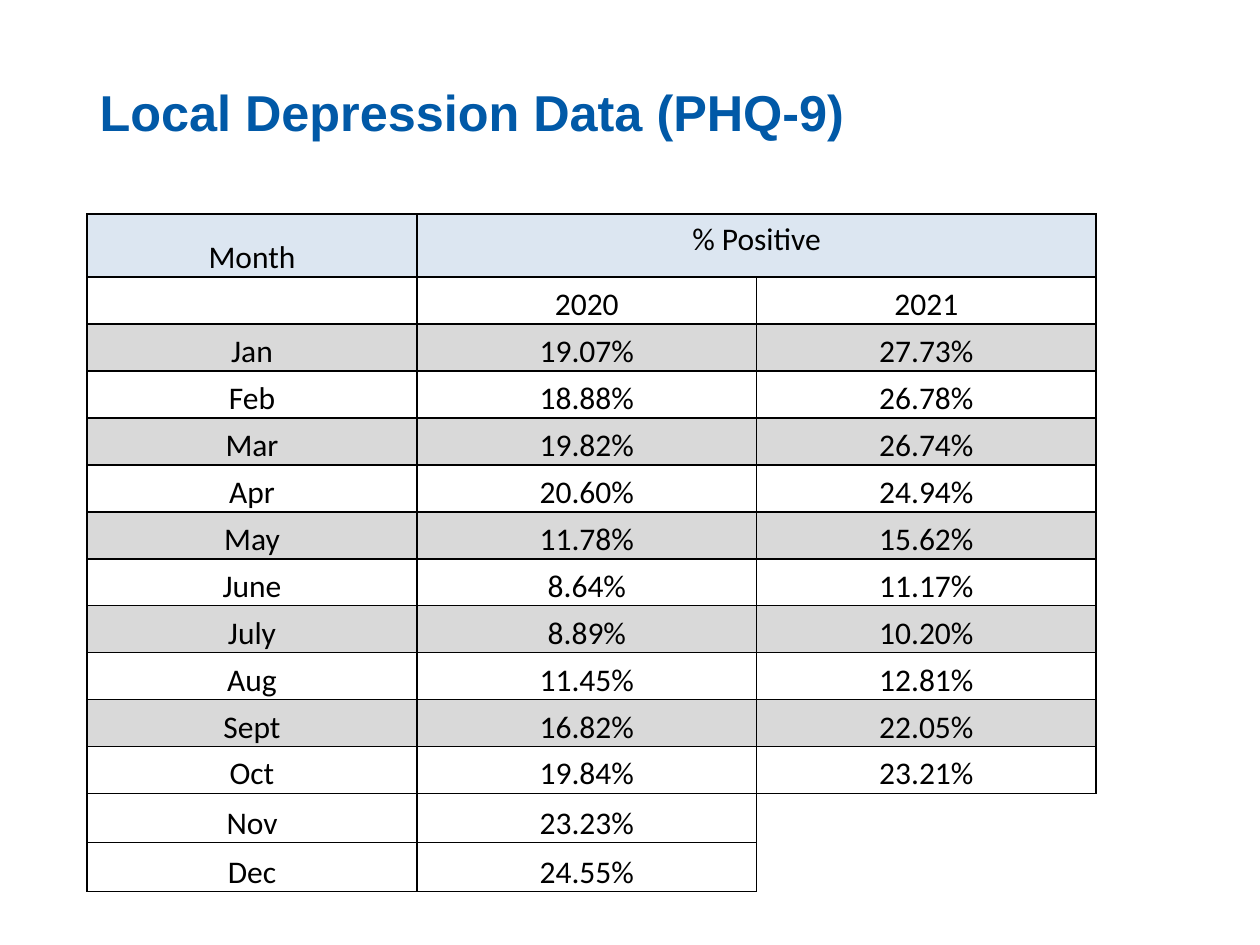
from lxml import etree
from pptx import Presentation
from pptx.dml.color import RGBColor
from pptx.enum.text import MSO_ANCHOR, MSO_AUTO_SIZE, PP_ALIGN
from pptx.oxml.ns import qn
from pptx.util import Inches, Pt

CENTER = PP_ALIGN.CENTER
TOP, MIDDLE, BOTTOM = MSO_ANCHOR.TOP, MSO_ANCHOR.MIDDLE, MSO_ANCHOR.BOTTOM
FIXED = MSO_AUTO_SIZE.NONE

INK, BLUE, HEAD, BAND, WHITE = "000000", "0159A7", "DCE6F1", "D9D9D9", "FFFFFF"

DATA = [
    ("Month", "% Positive", ""),
    ("", "2020", "2021"),
    ("Jan", "19.07%", "27.73%"),
    ("Feb", "18.88%", "26.78%"),
    ("Mar", "19.82%", "26.74%"),
    ("Apr", "20.60%", "24.94%"),
    ("May", "11.78%", "15.62%"),
    ("June", "8.64%", "11.17%"),
    ("July", "8.89%", "10.20%"),
    ("Aug", "11.45%", "12.81%"),
    ("Sept", "16.82%", "22.05%"),
    ("Oct", "19.84%", "23.21%"),
    ("Nov", "23.23%", ""),
    ("Dec", "24.55%", ""),
]
LAST = 11  # last row with a value for 2021


def color(code):
    return RGBColor.from_string(code)


def write(para, text, font, size, code, bold=False):
    run = para.add_run()
    run.text = text
    run.font.name, run.font.size, run.font.bold = font, Pt(size), bold
    run.font.color.rgb = color(code)


def border(cell, sides):
    """Rule the named sides (L, R, T, B) and clear the others."""
    props = cell._tc.get_or_add_tcPr()
    for side in "LRTB":
        line = etree.SubElement(props, qn(f"a:ln{side}"), w=str(Pt(1)))
        if side in sides:
            fill = etree.SubElement(line, qn("a:solidFill"))
            etree.SubElement(fill, qn("a:srgbClr"), val=INK)
        else:
            etree.SubElement(line, qn("a:noFill"))


def inset(cell, left, top, right, bottom):
    cell.margin_left, cell.margin_right = Inches(left), Inches(right)
    cell.margin_top, cell.margin_bottom = Inches(top), Inches(bottom)


def shade(row):
    if row == 0:
        return HEAD
    return BAND if row % 2 == 0 and row < LAST else WHITE


def add_title(slide, box, text):
    title = slide.shapes.title
    title.left, title.top, title.width, title.height = map(Inches, box)
    frame = title.text_frame
    frame.auto_size, frame.word_wrap = FIXED, True
    frame.vertical_anchor = MIDDLE
    para = frame.paragraphs[0]
    para.alignment, para.line_spacing = PP_ALIGN.LEFT, 0.9
    write(para, text, "Arial", 28.8, BLUE, True)


def add_grid(slide, box, data):
    left, top, width, height = box
    table = slide.shapes.add_table(len(data), 3, *map(Inches, box)).table
    table.first_row = table.horz_banding = False

    # Column and row sizes: the middle rows share what is left
    first = 2.62
    for col, size in zip(table.columns, (first, *[(width - first) / 2] * 2)):
        col.width = Inches(size)
    head, foot = 0.5, 0.39
    tall = {0: head, 12: foot, 13: foot}
    rest = (height - sum(tall.values())) / (len(data) - len(tall))
    for r, row in enumerate(table.rows):
        row.height = Inches(tall.get(r, rest))

    # Cells
    for r, line in enumerate(data):
        for c, text in enumerate(line):
            cell = table.cell(r, c)
            void = c == 2 and r > LAST
            border(cell, ("LT" if r == LAST + 1 else "L") if void else "LRTB")
            if void:
                cell.fill.background()
            else:
                cell.fill.solid()
                cell.fill.fore_color.rgb = color(shade(r))
            inset(cell, 0.01, 0.01, 0.01, 0)
            cell.vertical_anchor = BOTTOM
            para = cell.text_frame.paragraphs[0]
            para.alignment = CENTER
            if text:
                write(para, text, "Calibri", 18, INK)
            else:
                para.font.size = Pt(18)

    # Heading over both years
    span = table.cell(0, 1)
    span.merge(table.cell(0, 2))
    inset(span, 0.11, 0.05, 0.11, 0.05)
    span.vertical_anchor = TOP


def main():
    deck = Presentation()
    deck.slide_width, deck.slide_height = Inches(10), Inches(7.5)
    slide = deck.slides.add_slide(deck.slide_layouts[5])
    add_title(slide, (0.69, 0.43, 6.38, 0.97), "Local Depression Data (PHQ-9)")
    add_grid(slide, (0.69, 1.7, 8.01, 5.38), DATA)
    deck.save("out.pptx")


if __name__ == "__main__":
    main()
